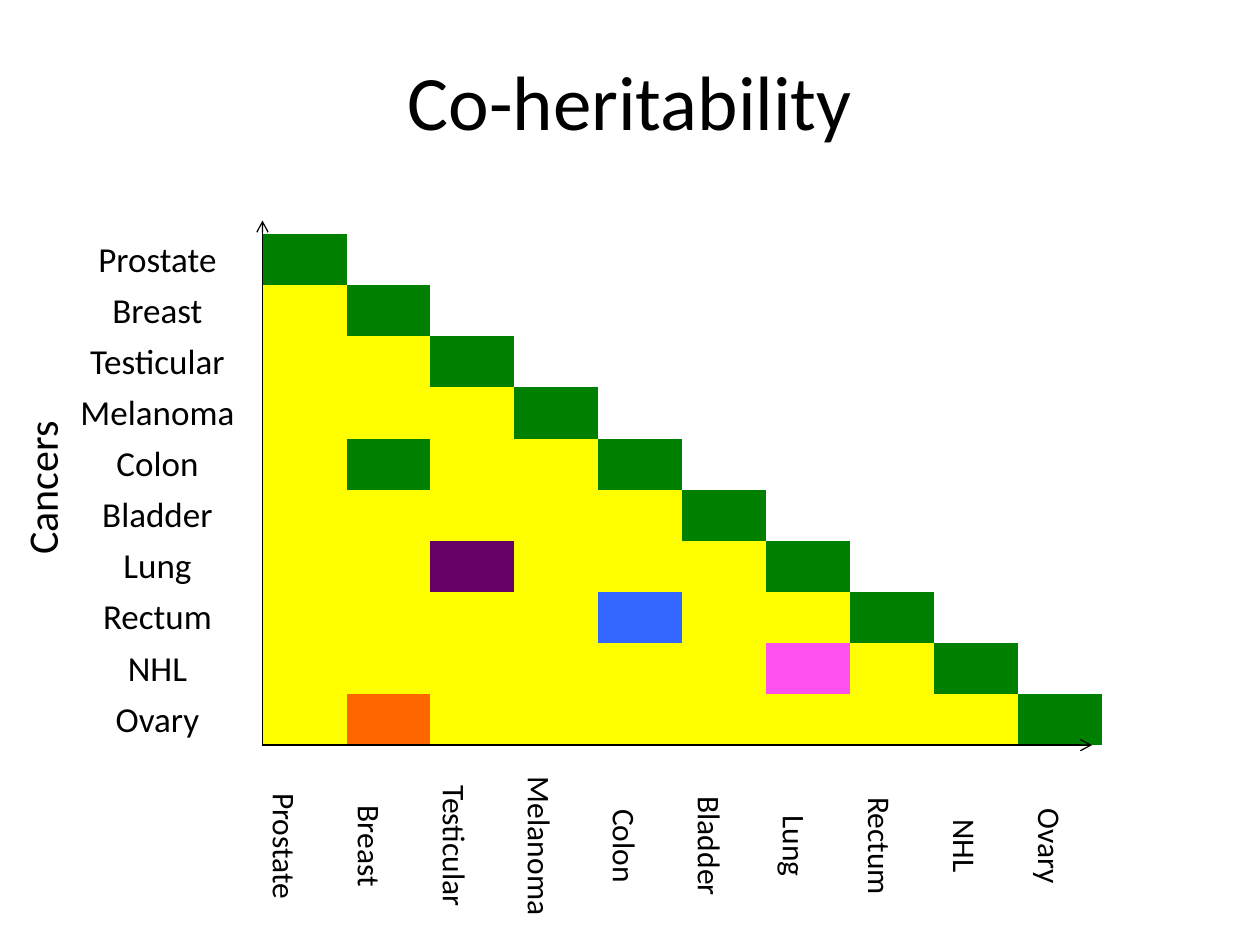
from dataclasses import dataclass

from lxml.etree import SubElement
from pptx import Presentation
from pptx.dml.color import RGBColor
from pptx.enum.shapes import MSO_CONNECTOR as Connector
from pptx.enum.text import MSO_ANCHOR as Anchor, MSO_AUTO_SIZE as AutoSize, PP_ALIGN as Align
from pptx.oxml.ns import qn
from pptx.util import Pt


@dataclass(frozen=True)
class Theme:
    font: str = "Calibri"
    ink: str = "000000"
    paper: str = "FFFFFF"
    diagonal: str = "008000"
    pair: str = "FFFF00"
    purple: str = "660066"
    blue: str = "3366FF"
    pink: str = "FF51EE"
    orange: str = "FF6600"
    title: int = 44
    axis: int = 24
    row_label: int = 20
    column_label: int = 18
    plain_table: str = "{2D5ABB26-0587-4C30-8999-92F81FD0307C}"


class Canvas:
    def __init__(self, slide, theme):
        self.slide = slide
        self.theme = theme

    def set_text(self, tf, text, size, align):
        p = tf.paragraphs[0]
        p.text = text
        p.alignment = align
        p.font.name = self.theme.font
        p.font.size = Pt(size)
        p.font.color.rgb = RGBColor.from_string(self.theme.ink)

    def title(self, text, x, y, w, h):
        sp = self.slide.shapes.title
        sp.left, sp.top, sp.width, sp.height = Pt(x), Pt(y), Pt(w), Pt(h)
        sp.text_frame.vertical_anchor = Anchor.MIDDLE
        self.set_text(sp.text_frame, text, self.theme.title, Align.CENTER)

    def table(self, rows, cols, x, y, cell_w, cell_h):
        frame = self.slide.shapes.add_table(
            rows, cols, Pt(x), Pt(y), Pt(cols * cell_w), Pt(rows * cell_h))
        table = frame.table
        table.first_row = table.horz_banding = False
        table._tbl.tblPr.find(qn("a:tableStyleId")).text = self.theme.plain_table
        for column in table.columns:
            column.width = Pt(cell_w)
        for row in table.rows:
            row.height = Pt(cell_h)
        return table

    def fill(self, cell, color):
        cell.fill.solid()
        cell.fill.fore_color.rgb = RGBColor.from_string(color)

    def matrix(self, size, special, x, y, cell_w, cell_h):
        t = self.theme
        table = self.table(size, size, x, y, cell_w, cell_h)
        for i in range(size):
            for j in range(size):
                cell = table.cell(i, j)
                cell.margin_top = cell.margin_bottom = 0
                base = t.diagonal if i == j else t.pair if j < i else t.paper
                self.fill(cell, special.get((i, j), base))

    def row_labels(self, labels, x, y, w, h):
        table = self.table(len(labels), 1, x, y, w, h)
        for i, label in enumerate(labels):
            cell = table.cell(i, 0)
            cell.margin_left = cell.margin_right = cell.margin_top = Pt(0.75)
            cell.margin_bottom = 0
            cell.vertical_anchor = Anchor.MIDDLE
            self.fill(cell, self.theme.paper)
            self.set_text(cell.text_frame, label, self.theme.row_label, Align.CENTER)

    def column_labels(self, labels, x, y, w, h):
        table = self.table(1, len(labels), x, y, w, h)
        for j, label in enumerate(labels):
            cell = table.cell(0, j)
            cell._tc.get_or_add_tcPr().set("vert", "vert")
            cell.fill.background()
            self.set_text(cell.text_frame, label, self.theme.column_label, Align.CENTER)

    def arrow(self, x1, y1, x2, y2):
        s = self.slide.shapes.add_connector(
            Connector.STRAIGHT, Pt(x1), Pt(y1), Pt(x2), Pt(y2))
        s.line.color.rgb = RGBColor.from_string(self.theme.ink)
        s.line.width = Pt(0.75)
        SubElement(s.line._get_or_add_ln(), qn("a:tailEnd"), type="arrow")
        SubElement(s._element.spPr, qn("a:effectLst"))

    def axis_title(self, text, x, y, w, h):
        s = self.slide.shapes.add_textbox(Pt(x), Pt(y), Pt(w), Pt(h))
        s.rotation = 270
        tf = s.text_frame
        tf.word_wrap = False
        tf.auto_size = AutoSize.SHAPE_TO_FIT_TEXT
        self.set_text(tf, text, self.theme.axis, Align.LEFT)


def main():
    theme = Theme()
    prs = Presentation()
    prs.slide_width, prs.slide_height = Pt(720), Pt(540)
    canvas = Canvas(prs.slides.add_slide(prs.slide_layouts[5]), theme)

    cancers = ["Prostate", "Breast", "Testicular", "Melanoma", "Colon",
               "Bladder", "Lung", "Rectum", "NHL", "Ovary"]
    shared = {
        ("Colon", "Breast"): theme.diagonal,
        ("Lung", "Testicular"): theme.purple,
        ("Rectum", "Colon"): theme.blue,
        ("NHL", "Lung"): theme.pink,
        ("Ovary", "Breast"): theme.orange,
    }
    special = {(cancers.index(a), cancers.index(b)): color
               for (a, b), color in shared.items()}

    left, top, cell_w, cell_h, label_w = 150, 133.8, 48, 29.2, 120
    bottom = top + len(cancers) * cell_h

    canvas.title("Co-heritability", 36, 12, 648, 90)
    canvas.matrix(len(cancers), special, left, top, cell_w, cell_h)
    canvas.row_labels(cancers, left - label_w, top, label_w, cell_h)
    canvas.arrow(left, bottom, 624, bottom)
    canvas.arrow(left, bottom, left, 126)
    canvas.axis_title("Cancers", -29, 253.5, 105, 36)
    canvas.column_labels(cancers, 147.5, 427, 48.6, 113)
    prs.save("out.pptx")


if __name__ == "__main__":
    main()
